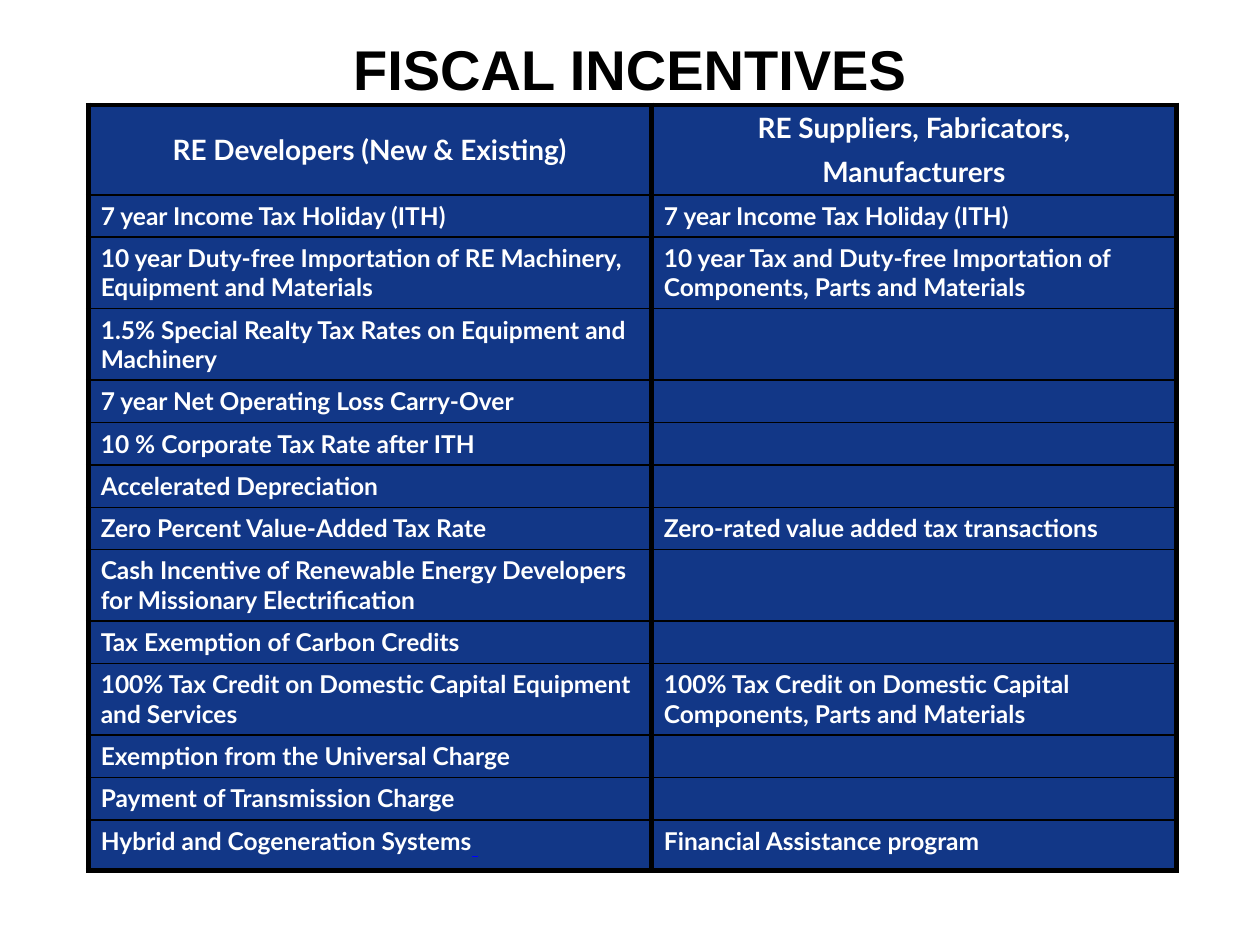
from dataclasses import dataclass

from lxml import etree
from pptx import Presentation
from pptx.dml.color import RGBColor
from pptx.enum.text import MSO_ANCHOR, PP_ALIGN
from pptx.oxml.ns import qn
from pptx.util import Pt

CENTER, LEFT = PP_ALIGN.CENTER, PP_ALIGN.LEFT
MIDDLE, TOP = MSO_ANCHOR.MIDDLE, MSO_ANCHOR.TOP


@dataclass(frozen=True)
class Theme:
    title_font: str = "Arial"
    body_font: str = "Lato"
    title_size: int = 32
    header_size: int = 16
    body_size: int = 14
    ink: str = "000000"
    fill: str = "123787"
    text: str = "FFFFFF"
    link: str = "0000FF"
    thick: int = 3
    thin: int = 1


@dataclass(frozen=True)
class Row:
    developers: str
    suppliers: str = ""
    height: float = 24


THEME = Theme()
HEADER_H, DOUBLE_H, LAST_H = 51.4, 40.7, 28.8
COL_WIDTHS = (321.8, 300.2)

ROWS = [
    Row("RE Developers (New & Existing)",
        "RE Suppliers, Fabricators,\nManufacturers", HEADER_H),
    Row("7 year Income Tax Holiday (ITH)", "7 year Income Tax Holiday (ITH)"),
    Row("10 year Duty-free Importation of RE Machinery, Equipment and Materials",
        "10 year Tax and Duty-free Importation of Components, Parts and Materials",
        DOUBLE_H),
    Row("1.5% Special Realty Tax Rates on Equipment and Machinery", height=DOUBLE_H),
    Row("7 year Net Operating Loss Carry-Over"),
    Row("10 % Corporate Tax Rate after ITH"),
    Row("Accelerated Depreciation"),
    Row("Zero Percent Value-Added Tax Rate", "Zero-rated value added tax transactions"),
    Row("Cash Incentive of Renewable Energy Developers for Missionary Electrification",
        height=DOUBLE_H),
    Row("Tax Exemption of Carbon Credits"),
    Row("100% Tax Credit on Domestic Capital Equipment and Services",
        "100% Tax Credit on Domestic Capital Components, Parts and Materials", DOUBLE_H),
    Row("Exemption from the Universal Charge"),
    Row("Payment of Transmission Charge"),
    Row("Hybrid and Cogeneration Systems", "Financial Assistance program", LAST_H),
]


def add_run(p, text: str, font: str, size: float, color: str, bold: bool = True):
    r = p.add_run()
    r.text = text
    r.font.name, r.font.size, r.font.bold = font, Pt(size), bold
    r.font.color.rgb = RGBColor.from_string(color)
    return r


def set_borders(cell, top: float, bottom: float) -> None:
    """Draw the four cell borders; the sides are always thick."""
    tc_pr = cell._tc.get_or_add_tcPr()
    widths = {"a:lnL": THEME.thick, "a:lnR": THEME.thick, "a:lnT": top, "a:lnB": bottom}
    for i, (tag, width) in enumerate(widths.items()):
        ln = etree.Element(qn(tag), w=str(Pt(width)))
        solid = etree.SubElement(ln, qn("a:solidFill"))
        etree.SubElement(solid, qn("a:srgbClr"), val=THEME.ink)
        tc_pr.insert(i, ln)


def fill_cell(cell, text: str, header: bool) -> None:
    cell.fill.solid()
    cell.fill.fore_color.rgb = RGBColor.from_string(THEME.fill)
    cell.vertical_anchor = MIDDLE if header else TOP
    size = THEME.header_size if header else THEME.body_size
    tf = cell.text_frame
    for i, line in enumerate(text.split("\n")):
        p = tf.add_paragraph() if i else tf.paragraphs[0]
        p.alignment = CENTER if header else LEFT
        p.space_after = Pt(6)
        if line:
            add_run(p, line, THEME.body_font, size, THEME.text)
        else:  # keep an empty cell from growing its row
            etree.SubElement(p._p, qn("a:endParaRPr"), sz=str(size * 100))


def add_incentives(s, left: float, top: float, rows: list[Row]) -> None:
    gf = s.shapes.add_table(len(rows), len(COL_WIDTHS), Pt(left), Pt(top),
                            Pt(sum(COL_WIDTHS)), Pt(sum(r.height for r in rows)))
    table = gf.table
    table.first_row = table.horz_banding = False
    for col, width in zip(table.columns, COL_WIDTHS):
        col.width = Pt(width)
    last = len(rows) - 1
    for i, row in enumerate(rows):
        table.rows[i].height = Pt(row.height)
        for j, text in enumerate((row.developers, row.suppliers)):
            cell = table.cell(i, j)
            fill_cell(cell, text, header=i == 0)
            set_borders(cell, THEME.thick if i == 0 else THEME.thin,
                        THEME.thick if i == last else THEME.thin)
    # Underlined space that closes the last developer entry
    p = table.cell(last, 0).text_frame.paragraphs[0]
    r = add_run(p, " ", THEME.body_font, THEME.body_size, THEME.link, bold=False)
    r.font.underline = True


def add_title(s, text: str) -> None:
    sp = s.shapes.add_textbox(Pt(0), Pt(-24), Pt(720), Pt(126))
    tf = sp.text_frame
    tf.word_wrap = True
    tf.vertical_anchor = MIDDLE
    p = tf.paragraphs[0]
    p.alignment = CENTER
    add_run(p, text, THEME.title_font, THEME.title_size, THEME.ink)


def main() -> None:
    prs = Presentation()
    prs.slide_width, prs.slide_height = Pt(720), Pt(540)
    s = prs.slides.add_slide(prs.slide_layouts[6])
    # Table first, title in front
    add_incentives(s, 50.4, 60, ROWS)
    add_title(s, "FISCAL INCENTIVES")
    prs.save("out.pptx")


if __name__ == "__main__":
    main()
